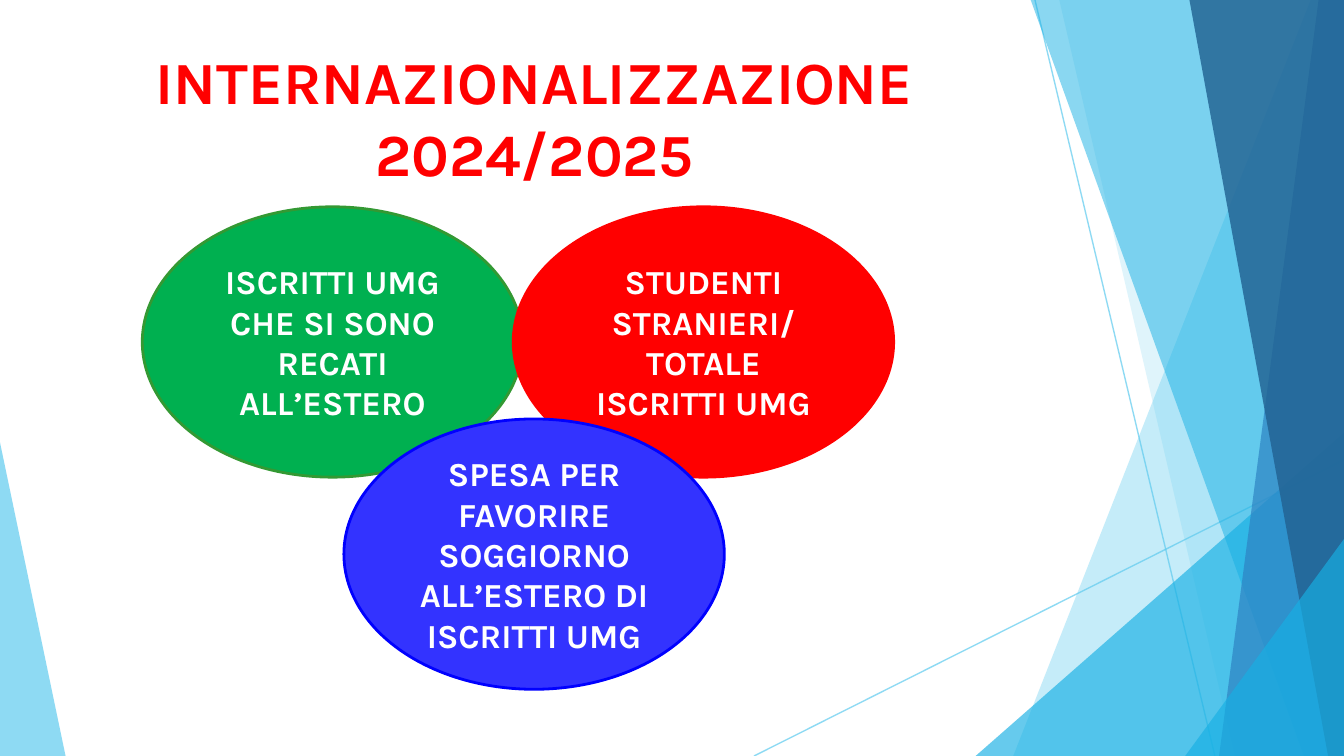
from lxml import etree
from pptx import Presentation
from pptx.dml.color import RGBColor
from pptx.enum.shapes import MSO_CONNECTOR as CONN, MSO_SHAPE as SHAPE
from pptx.enum.text import MSO_ANCHOR as ANCHOR, MSO_AUTO_SIZE as AUTO, PP_ALIGN as ALIGN
from pptx.oxml.ns import qn
from pptx.util import Cm, Pt

W, H = 25.4, 14.29
WHITE = RGBColor(0xFF, 0xFF, 0xFF)
RED = RGBColor(0xFF, 0x00, 0x00)
GREEN = RGBColor(0x00, 0xB0, 0x50)
DARK_GREEN = RGBColor(0x33, 0x99, 0x33)
BLUE = RGBColor(0x33, 0x33, 0xFF)
PURE_BLUE = RGBColor(0x00, 0x00, 0xFF)
SKY = RGBColor(0x5F, 0xCB, 0xEF)
CYAN = RGBColor(0x17, 0xB0, 0xE4)
MID_BLUE = RGBColor(0x2E, 0x83, 0xC3)
NAVY = RGBColor(0x22, 0x62, 0x92)


class Deck:
    font = {"name": "Karla", "bold": True}
    frame = {"word_wrap": True, "auto_size": AUTO.NONE, "vertical_anchor": ANCHOR.MIDDLE}

    def __init__(self):
        self.prs = Presentation()
        self.prs.slide_width, self.prs.slide_height = Cm(W), Cm(H)
        self.s = self.prs.slides.add_slide(self.prs.slide_layouts[5])

    def fade(self, sp, percent):
        clr = next(sp._element.spPr.iter(qn("a:srgbClr")))
        etree.SubElement(clr, qn("a:alpha")).set("val", str(percent * 1000))

    def set_text(self, sp, text, size, color):
        tf = sp.text_frame
        tf.text = text
        for key, value in self.frame.items():
            setattr(tf, key, value)
        for p in tf.paragraphs:
            p.alignment = ALIGN.CENTER
            for r in p.runs:
                for key, value in {**self.font, "size": Pt(size)}.items():
                    setattr(r.font, key, value)
                r.font.color.rgb = color

    def polygon(self, points, color, opacity):
        start, *rest = [(Cm(x), Cm(y)) for x, y in points]
        builder = self.s.shapes.build_freeform(*start)
        builder.add_line_segments(rest, close=True)
        sp = builder.convert_to_shape()
        sp.shadow.inherit = False
        sp.fill.solid()
        sp.fill.fore_color.rgb = color
        self.fade(sp, opacity)
        sp.line.fill.background()

    def band(self, top, bottom, color, opacity):
        self.polygon([(top, 0), (bottom, H), (W, H), (W, 0)], color, opacity)

    def corner(self, left, top, color, opacity):
        self.polygon([(left, H), (W, top), (W, H)], color, opacity)

    def line(self, x1, y1, x2, y2):
        cx = self.s.shapes.add_connector(CONN.STRAIGHT, Cm(x1), Cm(y1), Cm(x2), Cm(y2))
        cx.line.color.rgb = SKY
        cx.line.width = Pt(0.75)
        self.fade(cx, 70)
        etree.SubElement(cx._element.spPr, qn("a:effectLst"))

    def title(self, text):
        sp = self.s.shapes.title
        sp.left, sp.top, sp.width, sp.height = Cm(0.3), Cm(1.3), Cm(19.61), Cm(1.8)
        self.set_text(sp, text, 32, RED)
        self.s.shapes._spTree.append(sp._element)

    def ellipse(self, left, top, text, fill, border):
        sp = self.s.shapes.add_shape(SHAPE.OVAL, Cm(left), Cm(top), Cm(7.19), Cm(5.11))
        sp.shadow.inherit = False
        sp.fill.solid()
        sp.fill.fore_color.rgb = fill
        sp.line.color.rgb = border
        sp.line.width = Pt(1.5)
        self.set_text(sp, text, 18, WHITE)


def main():
    deck = Deck()

    deck.polygon([(0, 8.36), (1.24, H), (0, H)], SKY, 70)
    deck.line(14.25, H, W, 8.69)
    deck.line(19.56, 0, 22.96, H)
    deck.band(24.77, 19.15, SKY, 36)
    deck.band(20.02, 23.34, SKY, 20)
    deck.corner(18.44, 8.18, CYAN, 66)
    deck.band(19.48, 24.64, CYAN, 50)
    deck.band(24.92, 23.04, MID_BLUE, 70)
    deck.band(22.48, 25.1, NAVY, 82)
    deck.corner(22.4, 10.19, CYAN, 66)

    deck.title("INTERNAZIONALIZZAZIONE 2024/2025")
    deck.ellipse(2.69, 3.91, "ISCRITTI UMG\nCHE SI SONO\nRECATI ALL’ESTERO", GREEN, DARK_GREEN)
    deck.ellipse(9.7, 3.91, "STUDENTI STRANIERI/\nTOTALE ISCRITTI UMG", RED, RED)
    deck.ellipse(6.5, 7.92, "SPESA PER FAVORIRE SOGGIORNO ALL’ESTERO DI ISCRITTI UMG", BLUE, PURE_BLUE)

    deck.prs.save("out.pptx")


if __name__ == "__main__":
    main()
